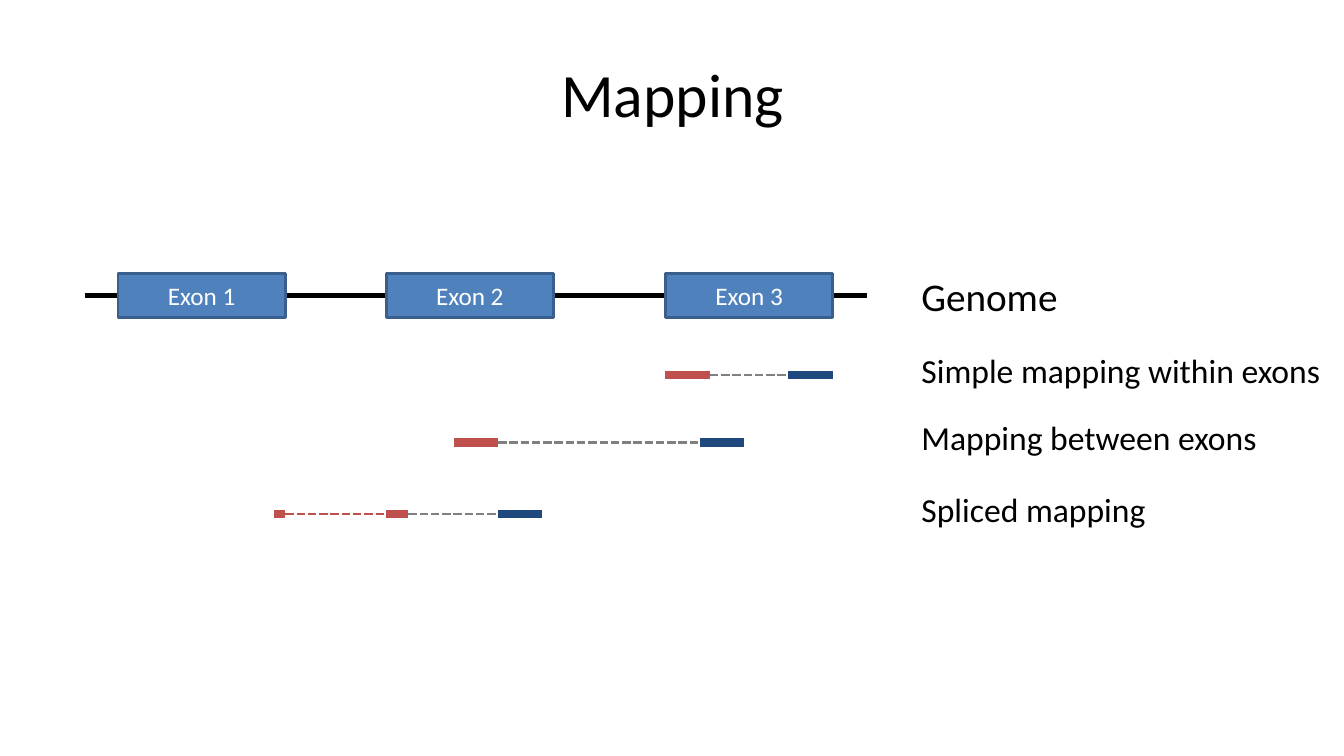
"""Build a slide that shows how read pairs map to the exons of a genome."""
from pptx import Presentation
from pptx.dml.color import RGBColor
from pptx.enum.dml import MSO_LINE
from pptx.enum.shapes import MSO_CONNECTOR, MSO_SHAPE
from pptx.enum.text import MSO_ANCHOR, PP_ALIGN
from pptx.oxml.ns import qn
from pptx.util import Pt
from lxml.etree import SubElement

EMU_PER_PX = 9144
BLACK = RGBColor(0x00, 0x00, 0x00)
WHITE = RGBColor(0xFF, 0xFF, 0xFF)
GREY = RGBColor(0x80, 0x80, 0x80)
READ_RED = RGBColor(0xC0, 0x50, 0x4D)
READ_BLUE = RGBColor(0x1F, 0x49, 0x7D)
EXON_FILL = RGBColor(0x4F, 0x81, 0xBD)
EXON_EDGE = RGBColor(0x3A, 0x5F, 0x8C)

GENOME_Y = 293
EXON_WIDTH, EXON_HEIGHT = 166, 44
EXON_LEFTS = (117, 383, 660)
READ_LENGTH = 44
LABEL_LEFT = 904


def px(length):
    """Turn a length in px into EMU."""
    return length * EMU_PER_PX


def write(frame, text, size, color=BLACK, align=PP_ALIGN.LEFT,
          anchor=MSO_ANCHOR.TOP, wrap=True):
    """Put one formatted paragraph into a text frame."""
    frame.word_wrap = wrap
    frame.vertical_anchor = anchor
    paragraph = frame.paragraphs[0]
    paragraph.alignment = align
    run = paragraph.add_run()
    run.text = text
    run.font.name = "Calibri"
    run.font.size = Pt(size)
    run.font.color.rgb = color


def add_text(slide, text, left, top, width, height, **text_format):
    """Add a text box."""
    box = slide.shapes.add_textbox(px(left), px(top), px(width), px(height))
    write(box.text_frame, text, **text_format)


def add_line(slide, start, end, y, color, weight, dashed=False):
    """Add a horizontal line."""
    line = slide.shapes.add_connector(
        MSO_CONNECTOR.STRAIGHT, px(start), px(y), px(end), px(y))
    line.line.color.rgb = color
    line.line.width = Pt(weight)
    if dashed:
        line.line.dash_style = MSO_LINE.SQUARE_DOT
    SubElement(line._element.spPr, qn("a:effectLst"))


def add_exon(slide, number, left):
    """Add a numbered exon centred on the genome line."""
    exon = slide.shapes.add_shape(
        MSO_SHAPE.RECTANGLE, px(left), px(GENOME_Y - EXON_HEIGHT // 2),
        px(EXON_WIDTH), px(EXON_HEIGHT))
    exon.shadow.inherit = False
    exon.fill.solid()
    exon.fill.fore_color.rgb = EXON_FILL
    exon.line.color.rgb = EXON_EDGE
    exon.line.width = Pt(2)
    write(exon.text_frame, f"Exon {number}", size=18, color=WHITE,
          align=PP_ALIGN.CENTER, anchor=MSO_ANCHOR.MIDDLE)


def add_read_pair(slide, y, red_parts, blue_start):
    """Add a red read, whole or spliced, joined to its blue mate."""
    for (_, donor_end), (acceptor_start, _) in zip(red_parts, red_parts[1:]):
        add_line(slide, donor_end, acceptor_start, y, READ_RED, 2, dashed=True)
    add_line(slide, red_parts[-1][1], blue_start, y, GREY, 2, dashed=True)
    for start, end in red_parts:
        add_line(slide, start, end, y, READ_RED, 6)
    add_line(slide, blue_start, blue_start + READ_LENGTH, y, READ_BLUE, 6)


def main():
    """Build and save the slide."""
    deck = Presentation()
    deck.slide_width, deck.slide_height = px(1333), px(750)
    slide = deck.slides.add_slide(deck.slide_layouts[6])

    add_text(slide, "Mapping", 67, 30, 1200, 125, size=44,
             align=PP_ALIGN.CENTER, anchor=MSO_ANCHOR.MIDDLE)

    add_line(slide, 84, 860, GENOME_Y, BLACK, 4)
    for number, left in enumerate(EXON_LEFTS, start=1):
        add_exon(slide, number, left)
    add_text(slide, "Genome", LABEL_LEFT, 265, 157, 57, size=28, wrap=False)

    mappings = (
        ("Simple mapping within exons", 419, 372, [(660, 704)], 782),
        ("Mapping between exons", 356, 439, [(450, 494)], 694),
        ("Spliced mapping", 245, 510, [(272, 283), (383, 405)], 494),
    )
    for label, label_width, y, red_parts, blue_start in mappings:
        add_read_pair(slide, y, red_parts, blue_start)
        add_text(slide, label, LABEL_LEFT, y - 30, label_width, 50,
                 size=24, wrap=False)

    deck.save("out.pptx")


if __name__ == "__main__":
    main()
